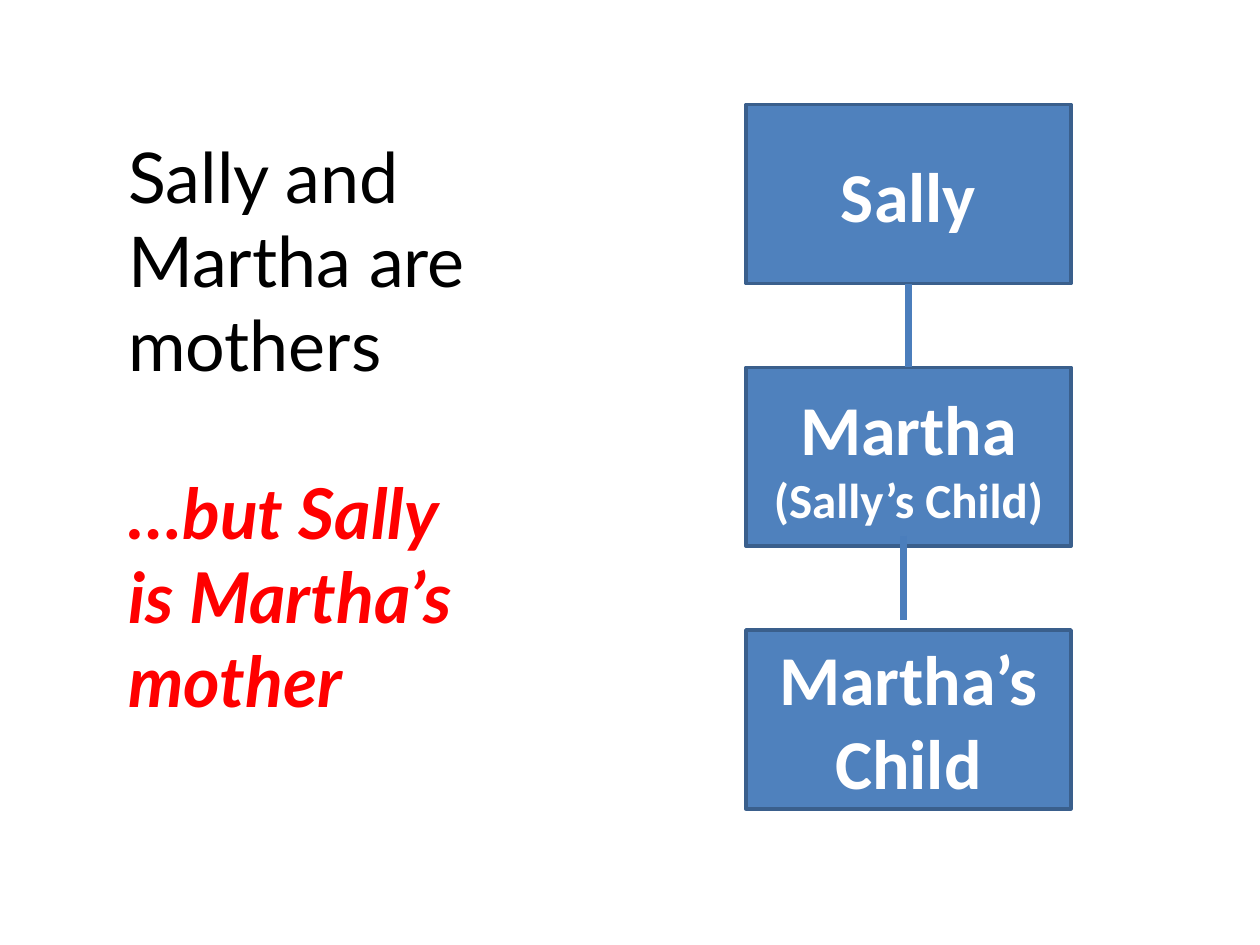
import pptx
import pptx.util
import pptx.dml.color
import pptx.enum.shapes
import pptx.enum.text
import lxml.etree
from pptx.util import Inches, Pt

BLACK = pptx.dml.color.RGBColor(0x00, 0x00, 0x00)
RED = pptx.dml.color.RGBColor(0xFF, 0x00, 0x00)
WHITE = pptx.dml.color.RGBColor(0xFF, 0xFF, 0xFF)
BOX_BLUE = pptx.dml.color.RGBColor(0x4F, 0x81, 0xBD)
BORDER_BLUE = pptx.dml.color.RGBColor(0x3A, 0x5F, 0x8C)
LINK_BLUE = pptx.dml.color.RGBColor(0x4B, 0x7E, 0xBC)


def add_run(paragraph, text, font_name, size, color, bold=False, italic=False):
    run = paragraph.add_run()
    run.text = text
    run.font.name = font_name
    run.font.size = Pt(size)
    run.font.color.rgb = color
    run.font.bold = bold
    run.font.italic = italic


def add_link(x, top, bottom):
    """Add a vertical family-tree line without a shadow."""
    link = slide.shapes.add_connector(
        pptx.enum.shapes.MSO_CONNECTOR.STRAIGHT,
        Inches(x), Inches(top), Inches(x), Inches(bottom))
    link.line.color.rgb = LINK_BLUE
    link.line.width = Pt(3.75)
    lxml.etree.SubElement(link.element.spPr, pptx.oxml.ns.qn("a:effectLst"))
    return link


presentation = pptx.Presentation()
presentation.slide_width = Inches(10)
presentation.slide_height = Inches(7.5)
slide = presentation.slides.add_slide(presentation.slide_layouts[6])

# Statement on the left
statement = slide.shapes.add_textbox(
    Inches(0.92), Inches(1.01), Inches(2.92), Inches(4.81)).text_frame
statement.word_wrap = True
add_run(statement.paragraphs[0], "Sally and Martha are mothers", "Lato", 40, BLACK)
contrast = statement.add_paragraph()
contrast.space_before = Pt(48)
add_run(contrast, "…but Sally is Martha’s mother", "Lato", 40, RED,
        bold=True, italic=True)

# Three generations on the right, evenly spaced
generations = [
    [("Sally", 40)],
    [("Martha ", 40), ("(Sally’s Child)", 28)],
    [("Martha’s Child", 40)],
]
people = []
for row, labels in enumerate(generations):
    person = slide.shapes.add_shape(
        pptx.enum.shapes.MSO_SHAPE.RECTANGLE,
        Inches(5.92), Inches(0.83 + row * 2.085), Inches(2.58), Inches(1.42))
    person.shadow.inherit = False
    person.fill.solid()
    person.fill.fore_color.rgb = BOX_BLUE
    person.line.color.rgb = BORDER_BLUE
    person.line.width = Pt(2)
    person.text_frame.word_wrap = True
    person.text_frame.vertical_anchor = pptx.enum.text.MSO_ANCHOR.MIDDLE
    name = person.text_frame.paragraphs[0]
    name.alignment = pptx.enum.text.PP_ALIGN.CENTER
    for text, size in labels:
        add_run(name, text, "Calibri", size, WHITE, bold=True)
    people.append(person)

sally, martha, child = people
sally_to_martha = add_link(7.21, 2.25, 2.92)
sally_to_martha.begin_connect(sally, 2)
sally_to_martha.end_connect(martha, 0)
add_link(7.17, 4.25, 4.92)

presentation.save("out.pptx")
